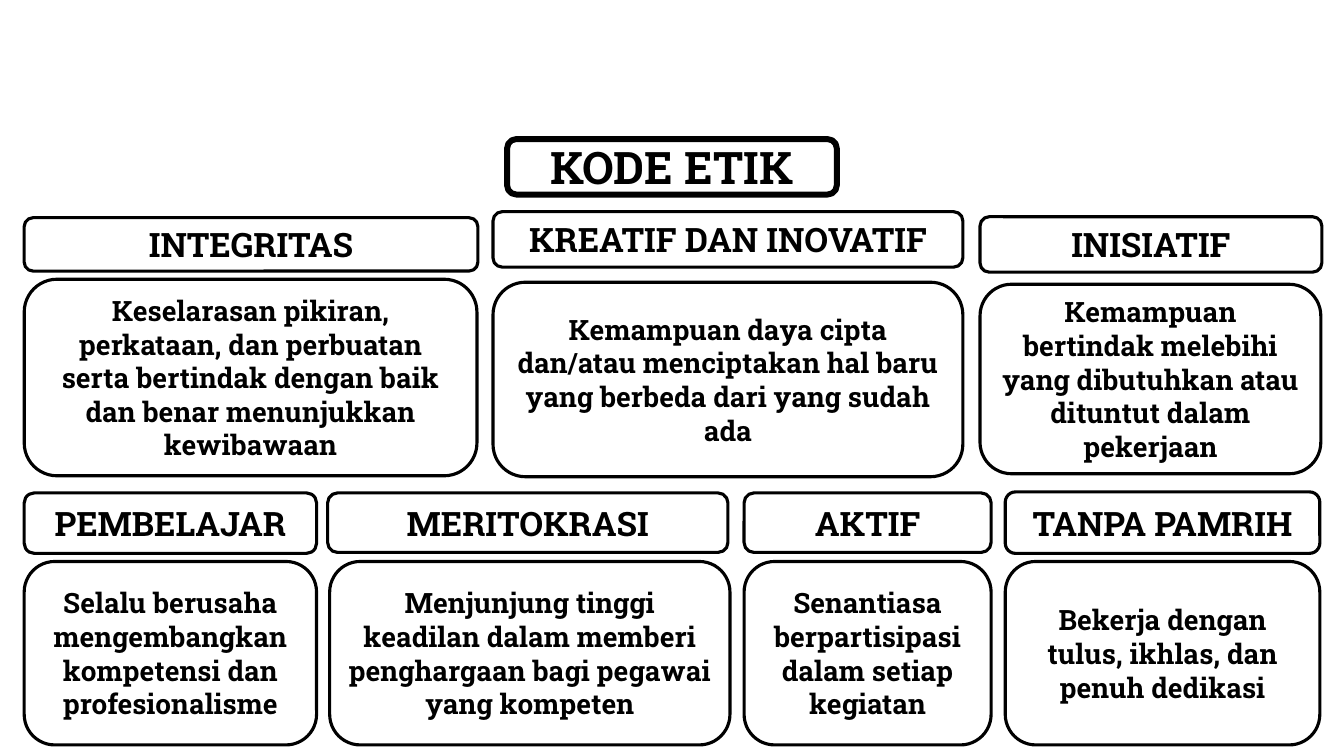
from collections import namedtuple

from pptx import Presentation
from pptx.dml.color import RGBColor
from pptx.enum.shapes import MSO_SHAPE
from pptx.enum.text import MSO_ANCHOR, MSO_AUTO_SIZE, PP_ALIGN
from pptx.util import Inches, Pt

ROUNDED = MSO_SHAPE.ROUNDED_RECTANGLE
CARD_SHAPE = MSO_SHAPE.FLOWCHART_ALTERNATE_PROCESS
MIDDLE = MSO_ANCHOR.MIDDLE
CENTER = PP_ALIGN.CENTER
NO_AUTOFIT = MSO_AUTO_SIZE.NONE
TITLE_ONLY = 5

FONT = "Roboto Slab"
COLORS = {"ink": "000000"}

# Lengths in inches
Box = namedtuple("Box", "left top width height")
# Offsets are measured from the row's box
Card = namedtuple("Card", "heading text heading_box text_box")

TITLE_BOX = Box(5.03, 1.38, 3.27, 0.55)
UPPER_ROW = Box(0.24, 2.1, 12.87, 2.63)
LOWER_ROW = Box(0.24, 4.88, 12.87, 2.51)

UPPER_CARDS = [
    Card("INTEGRITAS",
         "Keselarasan pikiran, perkataan, dan perbuatan serta bertindak "
         "dengan baik dan benar menunjukkan kewibawaan",
         Box(0, 0.06, 4.5, 0.53), Box(0, 0.67, 4.49, 1.95)),
    Card("KREATIF DAN INOVATIF",
         "Kemampuan daya cipta dan/atau menciptakan hal baru "
         "yang berbeda dari yang sudah ada",
         Box(4.65, 0, 4.66, 0.55), Box(4.65, 0.7, 4.66, 1.93)),
    Card("INISIATIF",
         "Kemampuan bertindak melebihi yang dibutuhkan atau "
         "dituntut dalam pekerjaan",
         Box(9.48, 0.05, 3.39, 0.55), Box(9.48, 0.72, 3.38, 1.88)),
]
LOWER_CARDS = [
    Card("PEMBELAJAR",
         "Selalu berusaha mengembangkan kompetensi dan profesionalisme",
         Box(0, 0.01, 2.9, 0.6), Box(0, 0.69, 2.9, 1.82)),
    Card("MERITOKRASI",
         "Menjunjung tinggi keadilan dalam memberi penghargaan "
         "bagi pegawai yang kompeten",
         Box(3.01, 0.01, 3.97, 0.59), Box(3.03, 0.69, 3.97, 1.82)),
    Card("AKTIF",
         "Senantiasa berpartisipasi dalam setiap kegiatan",
         Box(7.14, 0.01, 2.45, 0.59), Box(7.14, 0.69, 2.45, 1.82)),
    Card("TANPA PAMRIH",
         "Bekerja dengan tulus, ikhlas, dan penuh dedikasi",
         Box(9.73, 0, 3.12, 0.61), Box(9.73, 0.69, 3.12, 1.82)),
]


def write_text(shape, text, size):
    frame = shape.text_frame
    frame.text = text
    frame.word_wrap = True
    frame.auto_size = NO_AUTOFIT
    frame.vertical_anchor = MIDDLE
    paragraph = frame.paragraphs[0]
    paragraph.alignment = CENTER
    paragraph.line_spacing = 1.0
    paragraph.space_before = Pt(0)
    font = paragraph.font
    font.name = FONT
    font.size = Pt(size)
    font.bold = True
    font.color.rgb = RGBColor.from_string(COLORS["ink"])


def add_outline(slide, preset, box, line_width):
    shape = slide.shapes.add_shape(preset, *map(Inches, box))
    shape.shadow.inherit = False
    shape.fill.background()
    shape.line.color.rgb = RGBColor.from_string(COLORS["ink"])
    shape.line.width = Pt(line_width)
    return shape


def add_title(slide, box):
    add_outline(slide, ROUNDED, box, 4.25)
    title = slide.shapes.title
    title.left, title.top, title.width, title.height = map(Inches, box)
    write_text(title, "KODE ETIK", 32)


def add_card_row(slide, row, cards):
    for card in cards:
        parts = ((card.heading, card.heading_box, 24),
                 (card.text, card.text_box, 20))
        for text, offset, size in parts:
            box = Box(row.left + offset.left, row.top + offset.top,
                      offset.width, offset.height)
            write_text(add_outline(slide, CARD_SHAPE, box, 2.25), text, size)


def main():
    presentation = Presentation()
    presentation.slide_width = Inches(13.33)
    presentation.slide_height = Inches(7.5)
    slide = presentation.slides.add_slide(
        presentation.slide_layouts[TITLE_ONLY])

    add_title(slide, TITLE_BOX)
    add_card_row(slide, UPPER_ROW, UPPER_CARDS)
    add_card_row(slide, LOWER_ROW, LOWER_CARDS)

    presentation.save("out.pptx")


if __name__ == "__main__":
    main()
